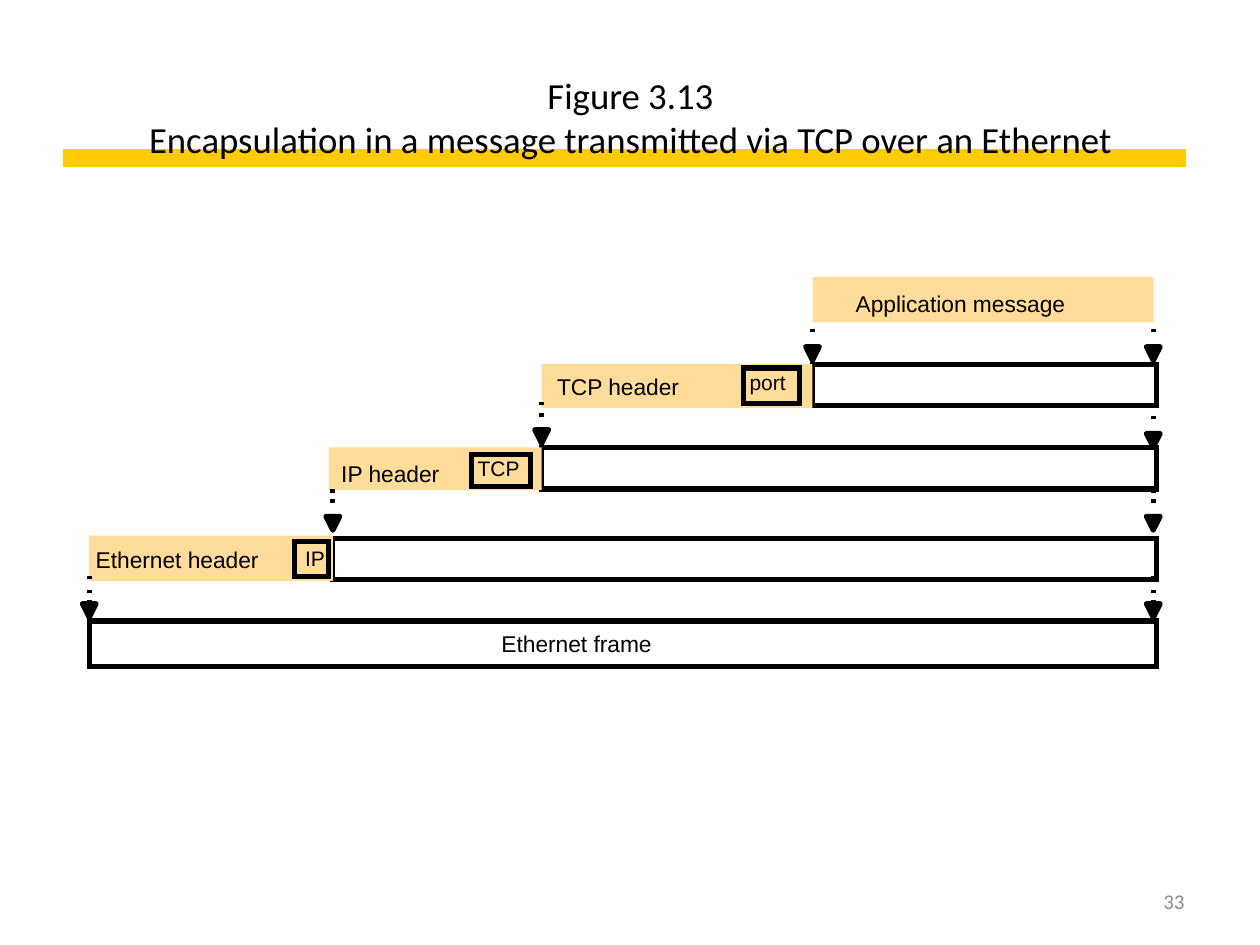
import pptx
import pptx.dml.color
import pptx.enum.shapes
import pptx.enum.text
import pptx.oxml
import pptx.util
from pptx.enum.text import MSO_ANCHOR, PP_ALIGN
from pptx.util import Cm

BLACK, SAND, GOLD, GREY = "000000", "FFDC99", "FFCC00", "8C8C8C"


def colour(value):
    return pptx.dml.color.RGBColor.from_string(value)


def add_xml(parent, tag):
    parent.append(pptx.oxml.parse_xml(
        f'<a:{tag} xmlns:a="http://schemas.openxmlformats.org/drawingml/2006/main"/>'))


class Painter:
    """Draws on one page; all lengths are centimetres."""
    stroke = 2.88
    head_half_width = 0.14
    head_height = 0.28
    dash = 0.07

    def __init__(self, page):
        self.page = page

    def text(self, words, left, top, width, height, size=13, font="Arial",
             ink=BLACK, align=PP_ALIGN.LEFT, anchor=MSO_ANCHOR.TOP, insets=(0, 0, 0, 0)):
        box = self.page.shapes.add_textbox(Cm(left), Cm(top), Cm(width), Cm(height))
        frame = box.text_frame
        frame.word_wrap = True
        frame.vertical_anchor = anchor
        (frame.margin_left, frame.margin_top,
         frame.margin_right, frame.margin_bottom) = map(Cm, insets)
        paragraph = frame.paragraphs[0]
        paragraph.text = words
        paragraph.alignment = align
        paragraph.font.size = pptx.util.Pt(size)
        paragraph.font.name = font
        paragraph.font.color.rgb = colour(ink)
        return paragraph

    def shape(self, left, top, width, height):
        shape = self.page.shapes.add_shape(
            pptx.enum.shapes.MSO_SHAPE.RECTANGLE, Cm(left), Cm(top), Cm(width), Cm(height))
        shape.shadow.inherit = False
        return shape

    def block(self, left, top, width, height):
        shape = self.shape(left, top, width, height)
        shape.fill.solid()
        shape.fill.fore_color.rgb = colour(SAND)
        shape.line.fill.background()

    def outline(self, left, top, width, height):
        shape = self.shape(left, top, width, height)
        shape.fill.background()
        shape.line.color.rgb = colour(BLACK)
        shape.line.width = pptx.util.Pt(self.stroke)
        add_xml(shape.line._get_or_add_ln(), "miter")

    def line(self, x1, y1, x2, y2, ink=BLACK, weight=stroke):
        line = self.page.shapes.add_connector(
            pptx.enum.shapes.MSO_CONNECTOR.STRAIGHT, Cm(x1), Cm(y1), Cm(x2), Cm(y2))
        line.line.color.rgb = colour(ink)
        line.line.width = pptx.util.Pt(weight)
        add_xml(line._element.spPr, "effectLst")

    def dashed_arrow(self, x, top, dashes):
        """Triangle whose base is at top, below dashes starting at the given heights."""
        half = self.head_half_width
        builder = self.page.shapes.build_freeform(Cm(x - half), Cm(top))
        builder.add_line_segments(
            [(Cm(x + half), Cm(top)), (Cm(x), Cm(top + self.head_height))], close=True)
        head = builder.convert_to_shape()
        head.shadow.inherit = False
        head.fill.solid()
        head.fill.fore_color.rgb = colour(BLACK)
        head.line.color.rgb = colour(BLACK)
        head.line.width = pptx.util.Pt(self.stroke)
        add_xml(head.line._get_or_add_ln(), "round")
        for y in dashes:
            self.line(x, y, x, y + self.dash)


def main():
    deck = pptx.Presentation()
    deck.slide_width, deck.slide_height = Cm(25.4), Cm(19.05)
    painter = Painter(deck.slides.add_slide(deck.slide_layouts[6]))

    # Title over its rule
    painter.line(1.27, 3.18, 23.9, 3.18, GOLD, 10)
    title = painter.text(
        "Figure 3.13\vEncapsulation in a message transmitted via TCP over an Ethernet",
        1.27, 0.76, 22.86, 3.18, 21, "Calibri", align=PP_ALIGN.CENTER,
        anchor=MSO_ANCHOR.MIDDLE, insets=(0.25, 0.13, 0.33, 0.13))
    title._p.get_or_add_pPr().set("marL", str(Cm(0.1)))

    # Application message
    painter.block(16.38, 5.59, 6.88, 0.91)
    painter.text("Application message", 17.25, 5.84, 5.23, 0.61)

    # Each layer: payload left edge, top and height, then its two arrows (head top, dashes)
    right, arrow_right = 23.32, 23.25
    layers = [
        (16.38, 7.34, 0.84, (6.99, [6.63]), (6.99, [6.63])),
        (10.92, 9.02, 0.84, (8.66, [8.1, 8.33, 8.61]), (8.74, [8.38])),
        (6.71, 10.85, 0.84, (10.41, [9.86, 10.06, 10.36]), (10.41, [9.86, 10.06, 10.36])),
        (1.8, 12.52, 0.91, (12.17, [11.61, 11.89, 12.09]), (12.17, [11.61, 11.89, 12.09])),
    ]
    # Each header: name, left, top, height, name position
    headers = [
        ("TCP header", 10.92, 7.34, 0.89, 11.23, 7.52),
        ("IP header", 6.63, 9.02, 0.86, 6.88, 9.27),
        ("Ethernet header", 1.8, 10.8, 0.91, 1.93, 11.0),
    ]
    for index, (left, top, height, left_arrow, right_arrow) in enumerate(layers):
        painter.outline(left, top, right - left, height)
        painter.dashed_arrow(left, *left_arrow)
        painter.dashed_arrow(arrow_right, *right_arrow)
        if index < len(headers):
            name, start, header_top, header_height, x, y = headers[index]
            painter.block(start, header_top, left - start, header_height)
            painter.text(name, x, y, 4.06, 0.61)
    painter.text("Ethernet frame", 10.11, 12.7, 3.76, 0.58)

    # Protocol fields inside the headers: name, text position and width, box
    for name, x, y, width, box in [
        ("port", 15.11, 7.44, 0.9, (14.99, 7.42, 1.12, 0.71)),
        ("TCP", 9.63, 9.19, 1.02, (9.5, 9.17, 1.19, 0.64)),
        ("IP", 6.15, 11.0, 0.52, (5.94, 10.92, 0.69, 0.71)),
    ]:
        painter.text(name, x, y, width, 0.56, 12)
        painter.outline(*box)

    # Page number
    painter.text("33", 18.21, 17.65, 5.92, 1.02, 12, "Calibri", GREY, PP_ALIGN.RIGHT,
                 MSO_ANCHOR.MIDDLE, (0.25, 0.13, 0.25, 0.13))

    deck.save("out.pptx")


if __name__ == "__main__":
    main()
